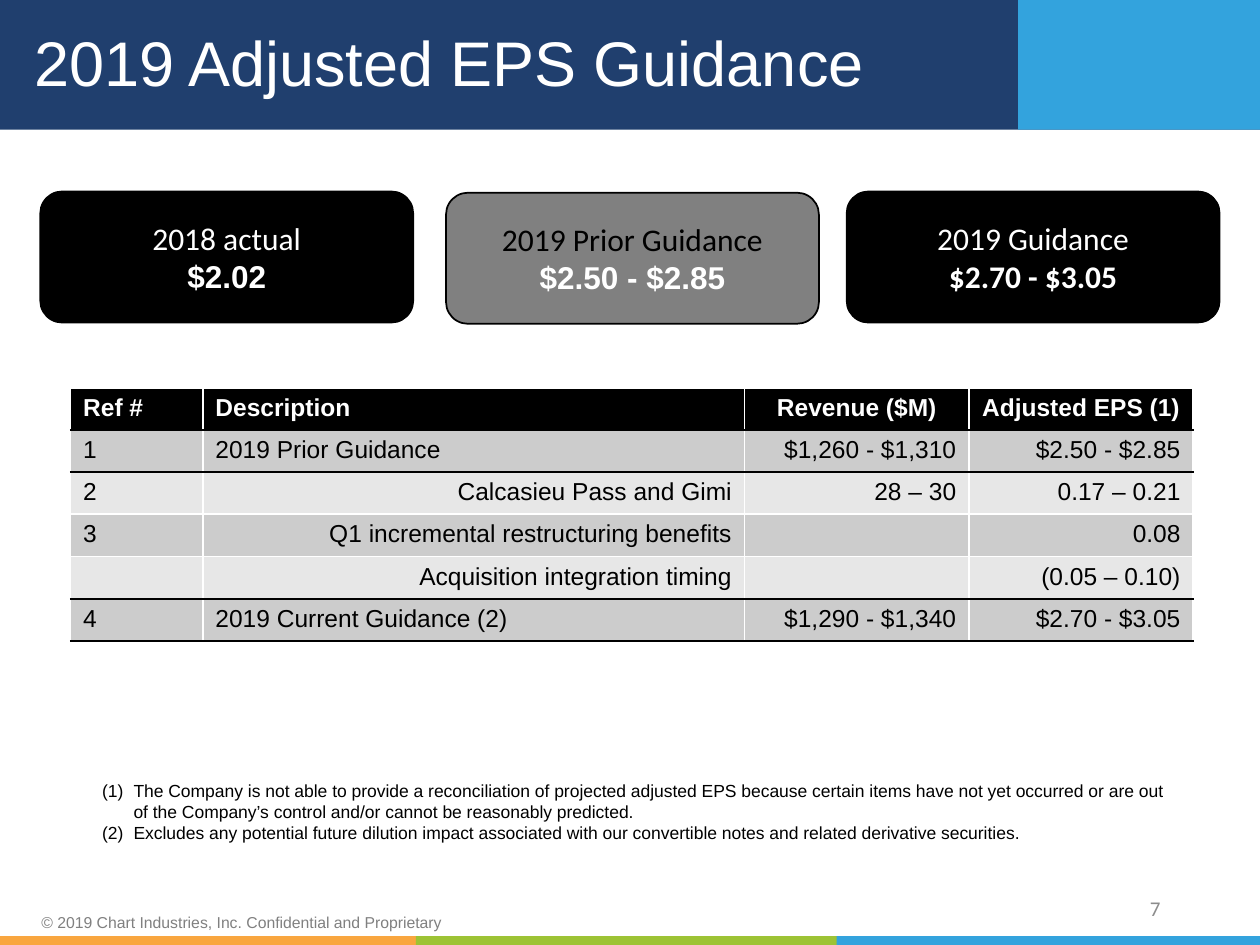
from lxml import etree
from pptx import Presentation
from pptx.dml.color import RGBColor
from pptx.enum.shapes import MSO_SHAPE
from pptx.enum.text import MSO_ANCHOR, MSO_AUTO_SIZE, PP_ALIGN
from pptx.oxml.ns import qn
from pptx.util import Inches, Pt

RECT, ROUND = MSO_SHAPE.RECTANGLE, MSO_SHAPE.ROUNDED_RECTANGLE
LEFT, MID, RIGHT = PP_ALIGN.LEFT, PP_ALIGN.CENTER, PP_ALIGN.RIGHT
TOP, CENTRE = MSO_ANCHOR.TOP, MSO_ANCHOR.MIDDLE
FIXED = MSO_AUTO_SIZE.NONE

NAVY = RGBColor(0x20, 0x3F, 0x6E)
BLUE = RGBColor(0x33, 0xA3, 0xDD)
AMBER = RGBColor(0xF9, 0xA6, 0x3F)
GREEN = RGBColor(0x9D, 0xC3, 0x35)
BLACK = RGBColor(0, 0, 0)
WHITE = RGBColor(0xFF, 0xFF, 0xFF)
GREY = RGBColor(0x80, 0x80, 0x80)
PALE = RGBColor(0x8C, 0x8C, 0x8C)
BAND = RGBColor(0xCC, 0xCC, 0xCC)
LIGHT = RGBColor(0xE7, 0xE7, 0xE7)


class Deck:
    sans, alt = "Arial", "Calibri"

    def __init__(self, slide):
        self.slide = slide
        self.shapes = slide.shapes

    def run(self, para, text, size, color, font=sans, bold=False):
        run = para.add_run()
        run.text = text
        face = run.font
        face.name, face.size, face.bold = font, Pt(size), bold
        face.color.rgb = color

    def place(self, shape, box):
        shape.left, shape.top, shape.width, shape.height = map(Inches, box)

    def frame(self, shape, anchor):
        frame = shape.text_frame
        frame.word_wrap = True
        frame.auto_size = FIXED
        frame.vertical_anchor = anchor
        return frame

    def block(self, kind, box, fill, line=None):
        shape = self.shapes.add_shape(kind, *map(Inches, box))
        shape.shadow.inherit = False
        shape.fill.solid()
        shape.fill.fore_color.rgb = fill
        if line is None:
            shape.line.fill.background()
        else:
            shape.line.color.rgb = line
            shape.line.width = Pt(1)
        return shape

    def card(self, box, fill, rows):
        frame = self.frame(self.block(ROUND, box, fill, BLACK), CENTRE)
        for i, (text, color, font, bold) in enumerate(rows):
            para = frame.add_paragraph() if i else frame.paragraphs[0]
            para.alignment = MID
            self.run(para, text, 18, color, font, bold)

    def label(self, box, text, size, color, font, align, pad=0.05):
        frame = self.frame(self.shapes.add_textbox(*map(Inches, box)), CENTRE)
        frame.margin_top = frame.margin_bottom = Inches(pad)
        para = frame.paragraphs[0]
        para.alignment = align
        self.run(para, text, size, color, font)

    def raise_up(self, shape):
        self.shapes._spTree.append(shape._element)

    def title(self, box, text):
        shape = self.shapes.title
        self.place(shape, box)
        self.raise_up(shape)
        para = self.frame(shape, CENTRE).paragraphs[0]
        para.alignment = LEFT
        para.line_spacing = 0.9
        self.run(para, text, 36, WHITE)

    def notes(self, box, items):
        shape = self.slide.placeholders[1]
        self.place(shape, box)
        self.raise_up(shape)
        frame = self.frame(shape, TOP)
        for i, text in enumerate(items):
            para = frame.add_paragraph() if i else frame.paragraphs[0]
            props = para._p.get_or_add_pPr()
            props.set("marL", str(Inches(0.25)))
            props.set("indent", str(-Inches(0.25)))
            etree.SubElement(props, qn("a:buFont"), typeface=self.sans)
            etree.SubElement(props, qn("a:buAutoNum"), type="arabicParenBoth")
            para.space_before = Pt(0)
            self.run(para, text, 10, BLACK)

    def edge(self, cell, side, color):
        props = cell._tc.get_or_add_tcPr()
        line = etree.SubElement(props, qn("a:ln" + side), w=str(Pt(1)))
        fill = etree.SubElement(line, qn("a:solidFill"))
        etree.SubElement(fill, qn("a:srgbClr"), val=str(color))

    def cell(self, cell, text, align, color, fill, above, below, bold):
        for side, tint in zip("LRTB", (WHITE, WHITE, above, below)):
            self.edge(cell, side, tint)
        cell.fill.solid()
        cell.fill.fore_color.rgb = fill
        para = cell.text_frame.paragraphs[0]
        para.alignment = align
        if text:
            self.run(para, text, 14, color, bold=bold)
        else:
            etree.SubElement(para._p, qn("a:endParaRPr"), sz="1400")

    def table(self, box, widths, rows, rules):
        item = self.shapes.add_table(len(rows), len(widths), *map(Inches, box))
        grid = item.table
        grid.horz_banding = False
        for col, width in zip(grid.columns, widths):
            col.width = Inches(width)
        for r, row in enumerate(rows):
            head = r == 0
            fill = BLACK if head else BAND if r % 2 else LIGHT
            # Adjustment lines, which sit between the guidance rows, go right
            inner = 1 < r < len(rows) - 1
            if head:
                sides = (LEFT, LEFT, MID, MID)
            else:
                sides = (LEFT, RIGHT if inner else LEFT, RIGHT, RIGHT)
            for c, (text, align) in enumerate(zip(row, sides)):
                self.cell(grid.cell(r, c), text, align,
                          WHITE if head else BLACK, fill,
                          rules[r], rules[r + 1], head)


def main():
    prs = Presentation()
    prs.slide_width, prs.slide_height = Inches(10), Inches(7.5)
    deck = Deck(prs.slides.add_slide(prs.slide_layouts[1]))

    # Banner and title
    deck.block(RECT, (-0.01, 0, 10.02, 1.03), NAVY)
    deck.block(RECT, (8.08, -0.01, 1.93, 1.04), BLUE)
    deck.title((0.17, 0.09, 7.83, 0.87), "2019 Adjusted EPS Guidance")

    # Footer
    deck.label((0.23, 7.23, 3.47, 0.18),
               "© 2019 Chart Industries, Inc. Confidential and Proprietary",
               9, GREY, deck.sans, LEFT, 0.02)
    for i, color in enumerate((AMBER, GREEN, BLUE)):
        deck.block(RECT, (-0.04 + 3.34 * i, 7.43, 3.38, 0.08), color)
    deck.label((7.06, 7.01, 2.25, 0.4), "7", 12, PALE, deck.alt, RIGHT)

    # Guidance cards
    cards = [
        (0.32, 1.52, BLACK, "2018 actual", WHITE, "$2.02", deck.sans),
        (3.54, 1.53, GREY, "2019 Prior Guidance", BLACK, "$2.50 - $2.85",
         deck.sans),
        (6.72, 1.52, BLACK, "2019 Guidance", WHITE, "$2.70 - $3.05", deck.alt),
    ]
    for left, top, fill, name, color, value, font in cards:
        deck.card((left, top, 2.96, 1.04), fill,
                  [(name, color, deck.alt, False), (value, WHITE, font, True)])

    # Footnotes
    deck.notes((0.71, 6.14, 8.68, 0.61), [
        "The Company is not able to provide a reconciliation of projected "
        "adjusted EPS because certain items have not yet occurred or are out "
        "of the Company’s control and/or cannot be reasonably predicted.",
        "Excludes any potential future dilution impact associated with our "
        "convertible notes and related derivative securities.",
    ])

    # Bridge from prior to current guidance
    rows = [
        ("Ref #", "Description", "Revenue ($M)", "Adjusted EPS (1)"),
        ("1", "2019 Prior Guidance", "$1,260 - $1,310", "$2.50 - $2.85"),
        ("2", "Calcasieu Pass and Gimi", "28 – 30", "0.17 – 0.21"),
        ("3", "Q1 incremental restructuring benefits", "", "0.08"),
        ("", "Acquisition integration timing", "", "(0.05 – 0.10)"),
        ("4", "2019 Current Guidance (2)", "$1,290 - $1,340", "$2.70 - $3.05"),
    ]
    rules = (WHITE, BLACK, BLACK, WHITE, WHITE, BLACK, BLACK)
    deck.table((0.56, 3.08, 8.91, 2), (1.05, 4.3, 1.78, 1.78), rows, rules)

    prs.save("out.pptx")


if __name__ == "__main__":
    main()
